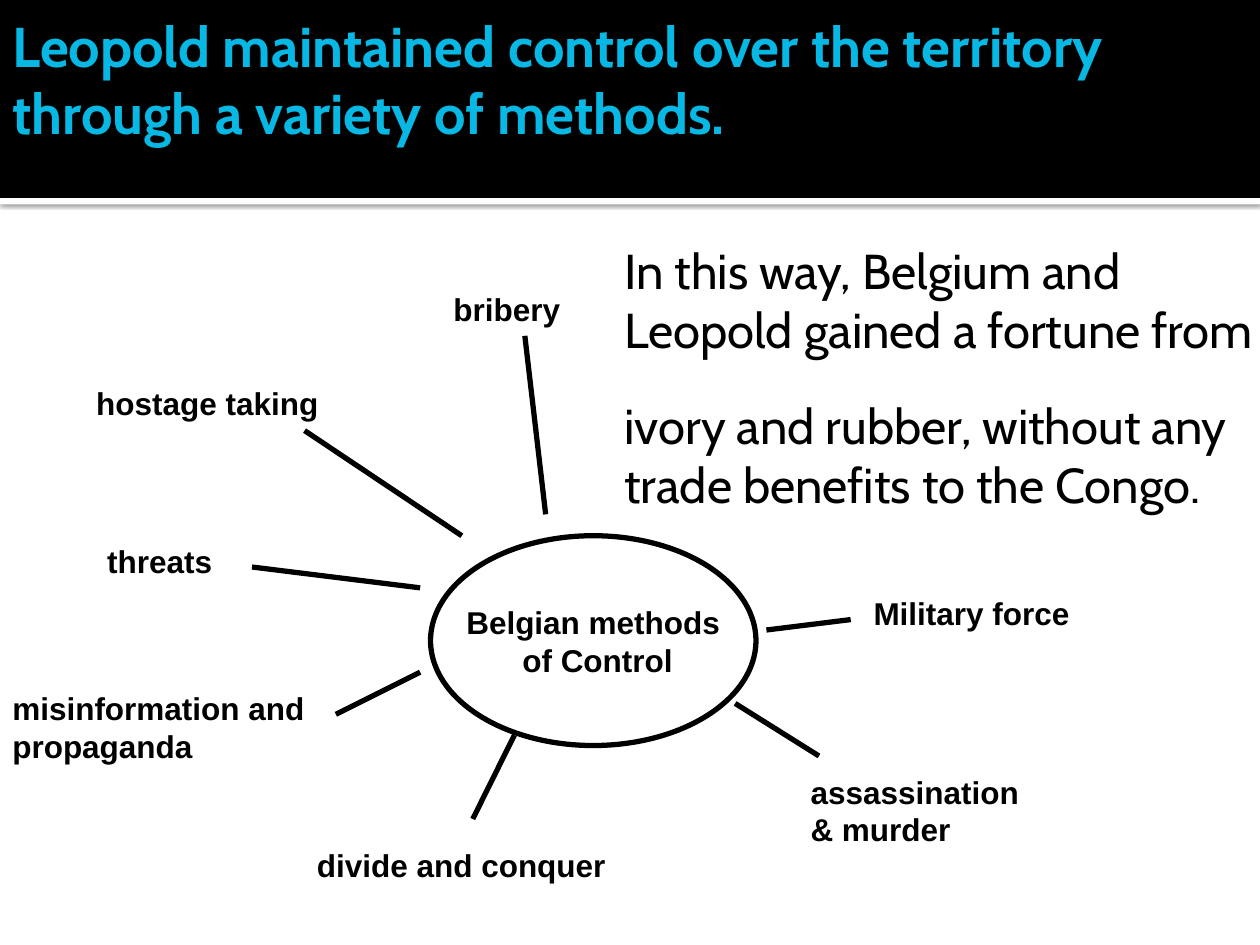
from lxml import etree
from pptx import Presentation
from pptx import util as u
from pptx.dml.color import RGBColor
from pptx.enum import shapes, text
from pptx.oxml import parse_xml
from pptx.oxml.ns import nsdecls, qn

COLORS = {"black": "000000", "white": "FFFFFF", "title": "08B8E4"}
SLIDE_SIZE = (25.4, 19.05)
HEADER_HEIGHT = 3.99

TITLE = ["Leopold maintained control over the territory ",
         "through a variety of methods."]
HUB = ["Belgian methods", " of Control"]
CONCLUSION = ["In this way, Belgium and ",
              "Leopold gained a fortune from ",
              "ivory and rubber, without any ",
              "trade benefits to the Congo."]

METHODS = [
    ("bribery", (8.89, 5.72, 4.87, 1.02), (11, 10.37, 10.58, 6.77)),
    ("threats", (1.91, 10.8, 3.39, 1.02), (5.08, 11.43, 8.47, 11.85)),
    ("Military force", (17.36, 11.85, 4.87, 1.02), (17.15, 12.49, 15.45, 12.7)),
    ("assassination & murder", (16.09, 15.45, 4.87, 1.78), (14.82, 14.18, 16.51, 15.24)),
    ("divide and conquer", (6.14, 16.93, 7.41, 1.02), (9.53, 16.51, 10.37, 14.82)),
    ("misinformation and propaganda", (0, 13.76, 7.41, 1.78), (6.77, 14.4, 8.47, 13.55)),
    ("hostage taking", (1.69, 7.62, 6.99, 1.02), (6.14, 8.68, 9.31, 10.8)),
]

SHADOW = (f'<a:effectLst {nsdecls("a")}>'
          '<a:outerShdw blurRad="31750" dist="10160" dir="5400000" algn="tl" rotWithShape="0">'
          f'<a:srgbClr val="{COLORS["black"]}"><a:alpha val="60000"/></a:srgbClr>'
          '</a:outerShdw></a:effectLst>')


def color(name):
    return RGBColor.from_string(COLORS[name])


def lengths(values):
    return [u.Cm(value) for value in values]


def write(shape, lines, size, font, ink="black", bold=False, wrap=True):
    frame = shape.text_frame
    frame.word_wrap = wrap
    paragraph = frame.paragraphs[0]
    for index, line in enumerate(lines):
        if index:
            paragraph.add_line_break()
        run = paragraph.add_run()
        run.text = line
        run.font.size = u.Pt(size)
        run.font.name = font
        run.font.bold = bold
        run.font.color.rgb = color(ink)
    return frame


def add_filled(slide, kind, box, fill):
    shape = slide.shapes.add_shape(kind, *lengths(box))
    shape.shadow.inherit = False
    shape.fill.solid()
    shape.fill.fore_color.rgb = color(fill)
    shape.line.fill.background()
    return shape


def add_header(slide):
    rectangle = shapes.MSO_SHAPE.RECTANGLE
    strip = add_filled(slide, rectangle, (0, HEADER_HEIGHT, SLIDE_SIZE[0], 0.13), "white")
    properties = strip.element.spPr
    properties.replace(properties.find(qn("a:effectLst")), parse_xml(SHADOW))
    add_filled(slide, rectangle, (0, 0, SLIDE_SIZE[0], HEADER_HEIGHT), "black")
    title = slide.shapes.add_textbox(*lengths((0, 0, 25.6, 3.18)))
    frame = write(title, TITLE, 32, "Cabin", "title", bold=True)
    frame.vertical_anchor = text.MSO_ANCHOR.MIDDLE
    frame.margin_right = u.Cm(0.13)


def add_hub(slide):
    hub = add_filled(slide, shapes.MSO_SHAPE.OVAL, (8.68, 10.8, 6.56, 4.23), "white")
    hub.line.color.rgb = color("black")
    hub.line.width = u.Pt(3)
    frame = write(hub, HUB, 18, "Arial", bold=True, wrap=False)
    frame.vertical_anchor = text.MSO_ANCHOR.MIDDLE
    frame.paragraphs[0].alignment = text.PP_ALIGN.CENTER


def add_method(slide, label, box, ends):
    spoke = slide.shapes.add_connector(shapes.MSO_CONNECTOR.STRAIGHT, *lengths(ends))
    spoke.line.color.rgb = color("black")
    spoke.line.width = u.Pt(3)
    etree.SubElement(spoke.element.spPr, qn("a:effectLst"))
    caption = slide.shapes.add_textbox(*lengths(box))
    frame = write(caption, [label], 18, "Arial", bold=True)
    frame.auto_size = text.MSO_AUTO_SIZE.SHAPE_TO_FIT_TEXT


def main():
    presentation = Presentation()
    presentation.slide_width, presentation.slide_height = lengths(SLIDE_SIZE)
    slide = presentation.slides.add_slide(presentation.slide_layouts[6])
    add_header(slide)
    add_hub(slide)
    for method in METHODS:
        add_method(slide, *method)
    conclusion = slide.shapes.add_textbox(*lengths((12.34, 4.72, 13.26, 5.05)))
    frame = write(conclusion, CONCLUSION, 28, "Cabin", wrap=False)
    frame.auto_size = text.MSO_AUTO_SIZE.SHAPE_TO_FIT_TEXT
    presentation.save("out.pptx")


if __name__ == "__main__":
    main()
